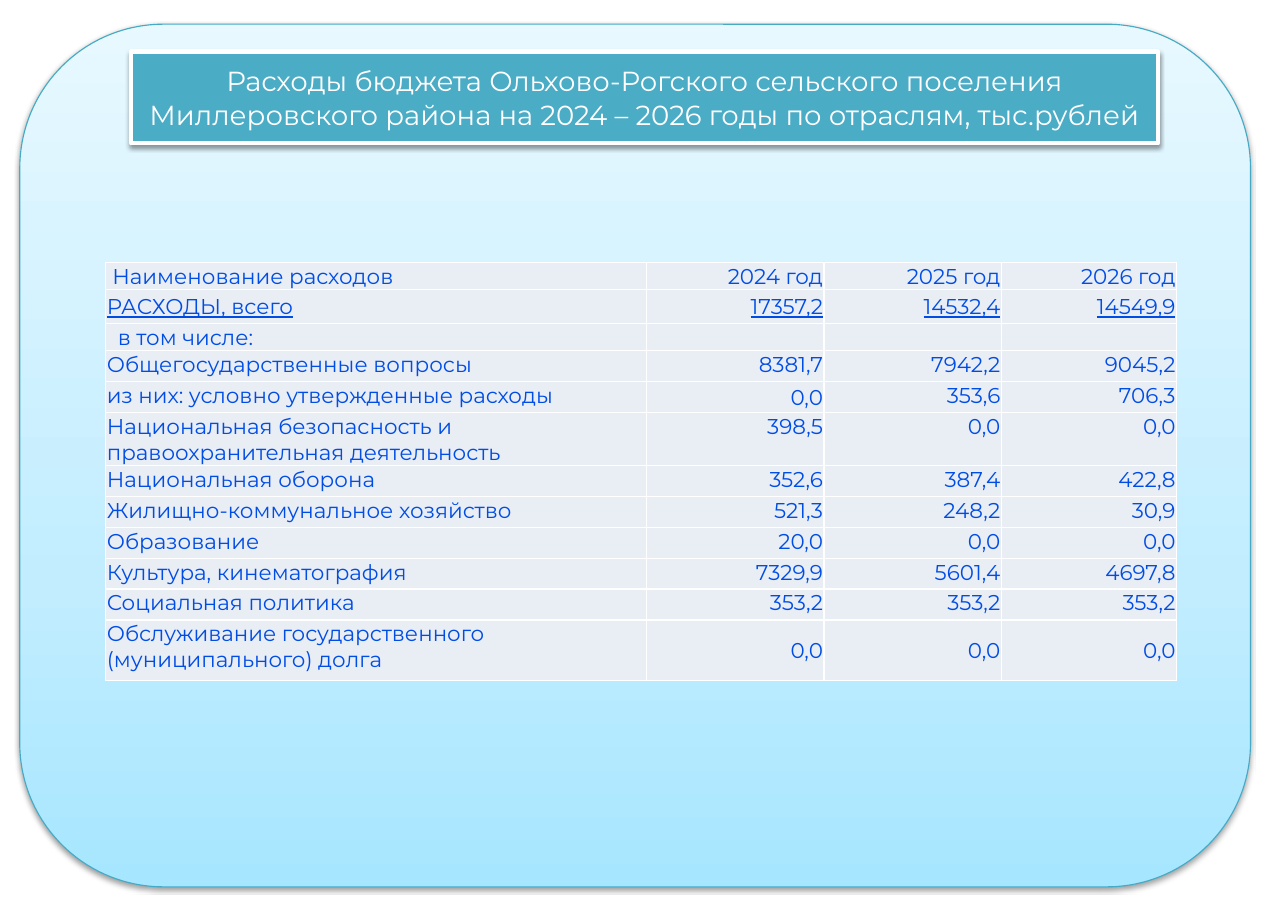
from dataclasses import dataclass

from lxml.etree import SubElement
from pptx import Presentation
from pptx.dml.color import RGBColor
from pptx.enum.shapes import MSO_SHAPE
from pptx.enum.text import MSO_ANCHOR, MSO_AUTO_SIZE, PP_ALIGN
from pptx.oxml.ns import qn
from pptx.util import Inches, Pt

WHITE = RGBColor(0xFF, 0xFF, 0xFF)
TEAL = RGBColor(0x4B, 0xAC, 0xC6)
PANEL_LINE = RGBColor(0x46, 0xAA, 0xC5)
CELL_FILL = RGBColor(0xE9, 0xED, 0xF4)
CELL_TEXT = RGBColor(0x00, 0x4D, 0xE6)
PANEL_STOPS = (
    (0, RGBColor(0xA7, 0xE6, 0xFF)),
    (35, RGBColor(0xC1, 0xED, 0xFF)),
    (100, RGBColor(0xE7, 0xF8, 0xFF)),
)
FONT = "Montserrat"
TITLE = (
    "Расходы бюджета Ольхово-Рогского сельского поселения "
    "Миллеровского района на 2024 – 2026 годы по отраслям, тыс.рублей"
)
COLUMN_WIDTHS = (4.91, 1.61, 1.61, 1.59)


@dataclass(frozen=True)
class ExpenseRow:
    label: str
    values: tuple[str, str, str]
    height: float = 0.28
    middle: tuple[int, ...] = ()  # columns centred vertically
    indent: float = 0.01
    underline: bool = False


ROWS = (
    ExpenseRow("Наименование расходов", ("2024 год", "2025 год", "2026 год"),
               0.24, middle=(1, 2, 3), indent=0.06),
    ExpenseRow("РАСХОДЫ, всего", ("17357,2", "14532,4", "14549,9"),
               0.31, middle=(0, 1, 2, 3), underline=True),
    ExpenseRow("в том числе:", ("", "", ""), 0.24, middle=(0,), indent=0.11),
    ExpenseRow("Общегосударственные вопросы", ("8381,7", "7942,2", "9045,2")),
    ExpenseRow("из них: условно утвержденные расходы", ("0,0", "353,6", "706,3"),
               middle=(1,)),
    ExpenseRow("Национальная безопасность и правоохранительная деятельность",
               ("398,5", "0,0", "0,0"), 0.48),
    ExpenseRow("Национальная оборона", ("352,6", "387,4", "422,8")),
    ExpenseRow("Жилищно-коммунальное хозяйство", ("521,3", "248,2", "30,9")),
    ExpenseRow("Образование", ("20,0", "0,0", "0,0")),
    ExpenseRow("Культура, кинематография", ("7329,9", "5601,4", "4697,8")),
    ExpenseRow("Социальная политика", ("353,2", "353,2", "353,2")),
    ExpenseRow("Обслуживание государственного (муниципального) долга",
               ("0,0", "0,0", "0,0"), 0.55, middle=(1, 2, 3)),
)


def format_font(para, size: float, color: RGBColor) -> None:
    para.font.name = FONT
    para.font.size = Pt(size)
    para.font.color.rgb = color


def add_shadow(shape) -> None:
    shape.shadow.inherit = False
    effects = shape.element.spPr.find(qn("a:effectLst"))
    shadow = SubElement(effects, qn("a:outerShdw"), blurRad=str(Pt(3.1)),
                        dist=str(Pt(1.6)), dir="5400000", rotWithShape="0")
    color = SubElement(shadow, qn("a:srgbClr"), val="000000")
    SubElement(color, qn("a:alpha"), val="38000")


def add_title(page):
    title = page.shapes.title
    title.left, title.top = Inches(1.19), Inches(0.47)
    title.width, title.height = Inches(9.32), Inches(0.83)
    title.fill.solid()
    title.fill.fore_color.rgb = TEAL
    title.line.color.rgb = WHITE
    title.line.width = Pt(3)
    add_shadow(title)
    frame = title.text_frame
    frame.text = TITLE
    frame.word_wrap = True
    frame.auto_size = MSO_AUTO_SIZE.NONE
    frame.vertical_anchor = MSO_ANCHOR.MIDDLE
    para = frame.paragraphs[0]
    para.alignment = PP_ALIGN.CENTER
    format_font(para, 18, WHITE)
    return title


def add_panel(page):
    panel = page.shapes.add_shape(MSO_SHAPE.ROUNDED_RECTANGLE, Inches(0.18),
                                  Inches(0.22), Inches(11.17), Inches(7.83))
    panel.fill.gradient()
    panel.fill.gradient_angle = 90
    stops = panel.element.spPr.find(".//" + qn("a:gsLst"))
    stops.clear()
    for position, color in PANEL_STOPS:
        stop = SubElement(stops, qn("a:gs"), pos=str(position * 1000))
        SubElement(stop, qn("a:srgbClr"), val=str(color))
    panel.line.color.rgb = PANEL_LINE
    panel.line.width = Pt(0.75)
    add_shadow(panel)
    return panel


def add_borders(cell) -> None:
    properties = cell._tc.get_or_add_tcPr()
    for side in ("a:lnL", "a:lnR", "a:lnT", "a:lnB"):
        line = SubElement(properties, qn(side), w=str(Pt(1)))
        fill = SubElement(line, qn("a:solidFill"))
        SubElement(fill, qn("a:srgbClr"), val=str(WHITE))


def fill_cell(cell, row: ExpenseRow, column: int) -> None:
    add_borders(cell)
    cell.fill.solid()
    cell.fill.fore_color.rgb = CELL_FILL
    cell.margin_left = Inches(0.01 if column else row.indent)
    cell.margin_right = cell.margin_top = Inches(0.01)
    cell.margin_bottom = 0
    cell.vertical_anchor = MSO_ANCHOR.MIDDLE if column in row.middle else MSO_ANCHOR.TOP
    cell.text = row.values[column - 1] if column else row.label
    para = cell.text_frame.paragraphs[0]
    para.alignment = PP_ALIGN.RIGHT if column else PP_ALIGN.LEFT
    format_font(para, 14, CELL_TEXT)
    para.font.underline = row.underline


def add_expense_table(page) -> None:
    height = sum(row.height for row in ROWS)
    table = page.shapes.add_table(len(ROWS), len(COLUMN_WIDTHS), Inches(0.96), Inches(2.38),
                                  Inches(sum(COLUMN_WIDTHS)), Inches(height)).table
    table.first_row = table.horz_banding = False
    for column, width in zip(table.columns, COLUMN_WIDTHS):
        column.width = Inches(width)
    for line, row in zip(table.rows, ROWS):
        line.height = Inches(row.height)
        for column, cell in enumerate(line.cells):
            fill_cell(cell, row, column)


def main() -> None:
    deck = Presentation()
    deck.slide_width, deck.slide_height = Inches(11.69), Inches(8.26)
    page = deck.slides.add_slide(deck.slide_layouts.get_by_name("Title Only"))
    title = add_title(page)
    panel = add_panel(page)
    title.element.addprevious(panel.element)  # the panel lies behind the title
    add_expense_table(page)
    deck.save("out.pptx")


if __name__ == "__main__":
    main()
